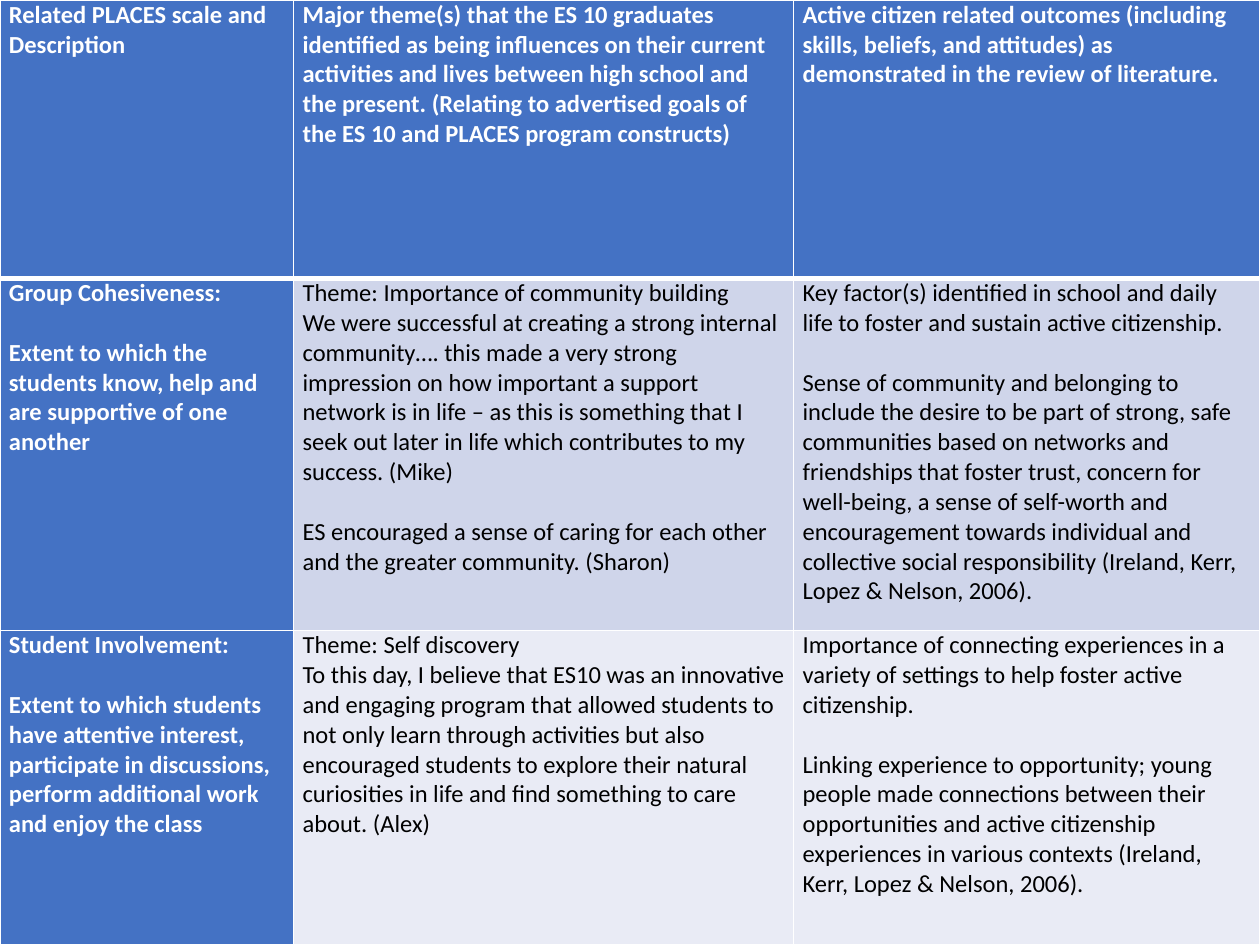
"""Build a slide with a table linking PLACES scales, graduate themes and citizenship outcomes."""
from lxml import etree
from pptx import Presentation
from pptx.dml.color import RGBColor
from pptx.oxml.ns import qn
from pptx.util import Cm, Pt

COLORS = {"accent": "4472C4", "band_dark": "CFD5EA", "band_light": "E9EBF5",
          "white": "FFFFFF", "black": "000000"}
FONT = "Calibri"
FONT_SIZE = Pt(14)
BLOCK_GAP = Pt(17.1)
SIDE_MARGIN = Cm(0.18)
THIN, THICK = Pt(1), Pt(3)
COLUMN_WIDTHS = [5.92, 10.08, 9.4]
ROW_HEIGHTS = [5.61, 7.1, 6.34]
BAND_FILLS = ["accent", "band_dark", "band_light"]

# Each cell is a list of blocks; each block is a list of paragraphs.
ROWS = [
    [
        [["Related PLACES scale and Description"]],
        [["Major theme(s) that the ES 10 graduates identified as being influences on their "
          "current activities and lives between high school and the present. (Relating to "
          "advertised goals of the ES 10 and PLACES program constructs)"]],
        [["Active citizen related outcomes (including skills, beliefs, and attitudes) as "
          "demonstrated in the review of literature."]],
    ],
    [
        [["Group Cohesiveness:"],
         ["Extent to which the students know, help and are supportive of one another"]],
        [["Theme: Importance of community building",
          "We were successful at creating a strong internal community…. this made a very "
          "strong impression on how important a support network is in life – as this is "
          "something that I seek out later in life which contributes to my success. (Mike)"],
         ["ES encouraged a sense of caring for each other and the greater community. (Sharon)"]],
        [["Key factor(s) identified in school and daily life to foster and sustain active "
          "citizenship."],
         ["Sense of community and belonging to include the desire to be part of strong, safe "
          "communities based on networks and friendships that foster trust, concern for "
          "well-being, a sense of self-worth and encouragement towards individual and "
          "collective social responsibility (Ireland, Kerr, Lopez & Nelson, 2006)."]],
    ],
    [
        [["Student Involvement:"],
         ["Extent to which students have attentive interest, participate in discussions, "
          "perform additional work and enjoy the class"]],
        [["Theme: Self discovery",
          "To this day, I believe that ES10 was an innovative and engaging program that "
          "allowed students to not only learn through activities but also encouraged students "
          "to explore their natural curiosities in life and find something to care about. "
          "(Alex)"]],
        [["Importance of connecting experiences in a variety of settings to help foster "
          "active citizenship."],
         ["Linking experience to opportunity; young people made connections between their "
          "opportunities and active citizenship experiences in various contexts (Ireland, "
          "Kerr, Lopez & Nelson, 2006)."]],
    ],
]


def set_borders(cell, top, bottom):
    properties = cell._tc.get_or_add_tcPr()
    for side, width in (("L", THIN), ("R", THIN), ("T", top), ("B", bottom)):
        line = etree.SubElement(properties, qn(f"a:ln{side}"), w=str(width))
        fill = etree.SubElement(line, qn("a:solidFill"))
        etree.SubElement(fill, qn("a:srgbClr"), val=COLORS["white"])


def write_blocks(cell, blocks, color, bold):
    cell.text_frame.text = "\n".join(text for block in blocks for text in block)
    paragraphs = iter(cell.text_frame.paragraphs)
    for block_index, block in enumerate(blocks):
        for line_index in range(len(block)):
            paragraph = next(paragraphs)
            if block_index and not line_index:
                paragraph.space_before = BLOCK_GAP
            font = paragraph.runs[0].font
            font.name, font.size, font.bold = FONT, FONT_SIZE, bold
            font.color.rgb = RGBColor.from_string(COLORS[color])


def main():
    presentation = Presentation()
    presentation.slide_width, presentation.slide_height = Cm(25.4), Cm(19.05)
    slide = presentation.slides.add_slide(presentation.slide_layouts[6])
    themes = slide.shapes.add_table(len(ROWS), len(COLUMN_WIDTHS), 0, 0,
                                    Cm(sum(COLUMN_WIDTHS)), Cm(sum(ROW_HEIGHTS))).table
    themes.first_col = True
    for column, width in zip(themes.columns, COLUMN_WIDTHS):
        column.width = Cm(width)
    for row, height in zip(themes.rows, ROW_HEIGHTS):
        row.height = Cm(height)

    for row_index, row_cells in enumerate(ROWS):
        for column_index, blocks in enumerate(row_cells):
            cell = themes.cell(row_index, column_index)
            is_heading = row_index == 0 or column_index == 0
            set_borders(cell, THICK if row_index == 1 else THIN,
                        THICK if row_index == 0 else THIN)
            cell.fill.solid()
            fill = "accent" if is_heading else BAND_FILLS[row_index]
            cell.fill.fore_color.rgb = RGBColor.from_string(COLORS[fill])
            cell.margin_left = cell.margin_right = SIDE_MARGIN
            cell.margin_top = cell.margin_bottom = 0
            write_blocks(cell, blocks, "white" if is_heading else "black", is_heading)

    presentation.save("out.pptx")


if __name__ == "__main__":
    main()
